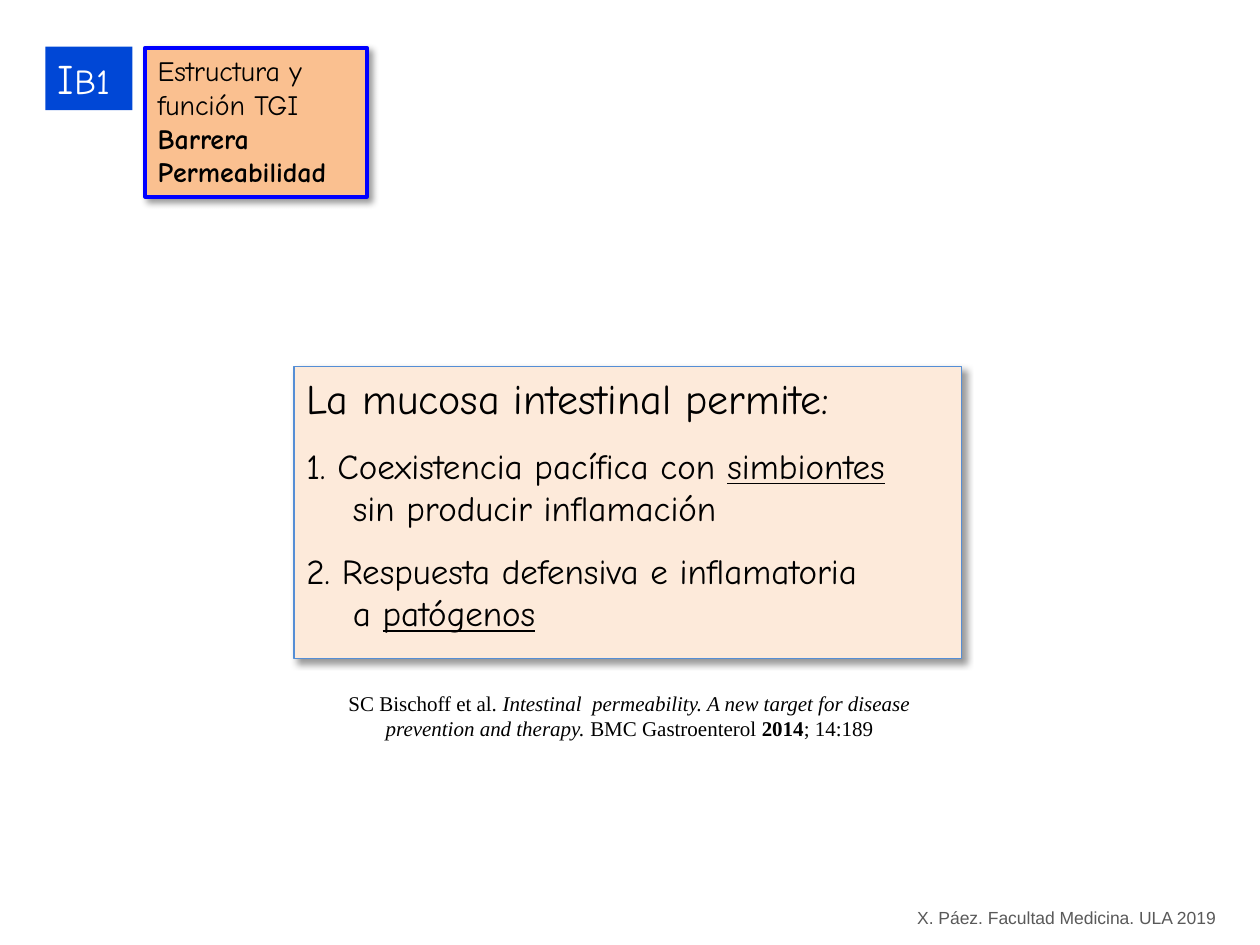
from lxml.etree import SubElement
from pptx import Presentation
from pptx.dml.color import RGBColor
from pptx.enum.shapes import MSO_SHAPE
from pptx.enum.text import MSO_ANCHOR, PP_ALIGN
from pptx.oxml.ns import qn
from pptx.util import Pt

BLACK = RGBColor(0x00, 0x00, 0x00)
WHITE = RGBColor(0xFF, 0xFF, 0xFF)
GRAY = RGBColor(0x59, 0x59, 0x59)
BADGE_BLUE = RGBColor(0x00, 0x47, 0xD6)
BORDER_BLUE = RGBColor(0x00, 0x00, 0xFF)
SOFT_BLUE = RGBColor(0x55, 0x8E, 0xD5)
ORANGE = RGBColor(0xFA, 0xC0, 0x90)
PEACH = RGBColor(0xFD, 0xEA, 0xDA)


class SlideBuilder:
    BODY, CITATION, FOOTER = "Comic Neue", "Times New Roman", "Arial"

    def __init__(self, slide):
        self.s = slide

    def box(self, left, top, width, height, fill, line=None, weight=0.75):
        """Add a filled rectangle; an outlined one also casts a shadow."""
        sp = self.s.shapes.add_shape(
            MSO_SHAPE.RECTANGLE, Pt(left), Pt(top), Pt(width), Pt(height))
        sp.shadow.inherit = False
        sp.fill.solid()
        sp.fill.fore_color.rgb = fill
        if line is None:
            sp.line.fill.background()
        else:
            sp.line.color.rgb = line
            sp.line.width = Pt(weight)
            self.shadow(sp)
        sp.text_frame.word_wrap = True
        sp.text_frame.vertical_anchor = MSO_ANCHOR.TOP
        return sp.text_frame

    def shadow(self, sp):
        effects = sp._element.spPr.find(qn("a:effectLst"))
        outer = SubElement(effects, qn("a:outerShdw"), blurRad=str(Pt(4)),
                           dist=str(Pt(3)), dir="2700000", algn="tl", rotWithShape="0")
        color = SubElement(outer, qn("a:srgbClr"), val="000000")
        SubElement(color, qn("a:alpha"), val="40000")

    def textbox(self, left, top, width, height, wrap=True):
        tf = self.s.shapes.add_textbox(
            Pt(left), Pt(top), Pt(width), Pt(height)).text_frame
        tf.word_wrap = wrap
        return tf

    def paragraph(self, tf, align=PP_ALIGN.LEFT, before=0, hanging=0):
        p = tf.paragraphs[0]
        if p.runs:
            p = tf.add_paragraph()
        p.alignment = align
        if before:
            p.space_before = Pt(before)
        if hanging:
            pPr = p._p.get_or_add_pPr()
            pPr.set("marL", str(Pt(hanging)))
            pPr.set("indent", str(-Pt(hanging)))
        return p

    def run(self, p, text, size, font=BODY, color=BLACK,
            bold=False, italic=False, underline=False):
        r = p.add_run()
        r.text = text
        r.font.name = font
        r.font.size = Pt(size)
        r.font.color.rgb = color
        r.font.bold = bold
        r.font.italic = italic
        r.font.underline = underline

    def list_item(self, tf, lines):
        """Add a hanging item; each line is a list of (text, underline)."""
        p = self.paragraph(tf, before=12, hanging=26.5)
        for i, line in enumerate(lines):
            if i:
                p.add_line_break()
            for text, underline in line:
                self.run(p, text, 20, underline=underline)


def main():
    prs = Presentation()
    prs.slide_width, prs.slide_height = Pt(720), Pt(540)
    b = SlideBuilder(prs.slides.add_slide(prs.slide_layouts[6]))

    footer = b.textbox(517, 514.8, 186.5, 19.4, wrap=False)
    b.run(b.paragraph(footer), "X. Páez. Facultad Medicina. ULA 2019", 10,
          b.FOOTER, GRAY)

    mucosa = b.box(168, 209.5, 381.6, 167, PEACH, SOFT_BLUE)
    b.run(b.paragraph(mucosa), "La mucosa intestinal permite:", 24)
    b.list_item(mucosa, [
        [("1. Coexistencia pacífica con ", False), ("simbiontes", True)],
        [("sin producir inflamación", False)],
    ])
    b.list_item(mucosa, [
        [("2. Respuesta defensiva e inflamatoria", False)],
        [("a ", False), ("patógenos", True)],
    ])

    badge = b.box(26, 26.6, 49.7, 36.3, BADGE_BLUE)
    p = b.paragraph(badge)
    b.run(p, "I", 24, color=WHITE)
    b.run(p, "B1", 20, color=WHITE)

    topic = b.box(83, 27.3, 126.7, 85.2, ORANGE, BORDER_BLUE, 2.25)
    for text, bold in (("Estructura y función TGI", False),
                       ("Barrera", True), ("Permeabilidad", True)):
        b.run(b.paragraph(topic), text, 16, bold=bold)

    citation = b.textbox(185.8, 391, 347.8, 36)
    p = b.paragraph(citation, PP_ALIGN.CENTER)
    for text, style in (
        ("SC Bischoff et al", {}),
        (". Intestinal  permeability. A new target for disease "
         "prevention and therapy. ", {"italic": True}),
        ("BMC Gastroenterol ", {}),
        ("2014", {"bold": True}),
        ("; 14:189", {}),
    ):
        b.run(p, text, 12, b.CITATION, **style)

    prs.save("out.pptx")


if __name__ == "__main__":
    main()
